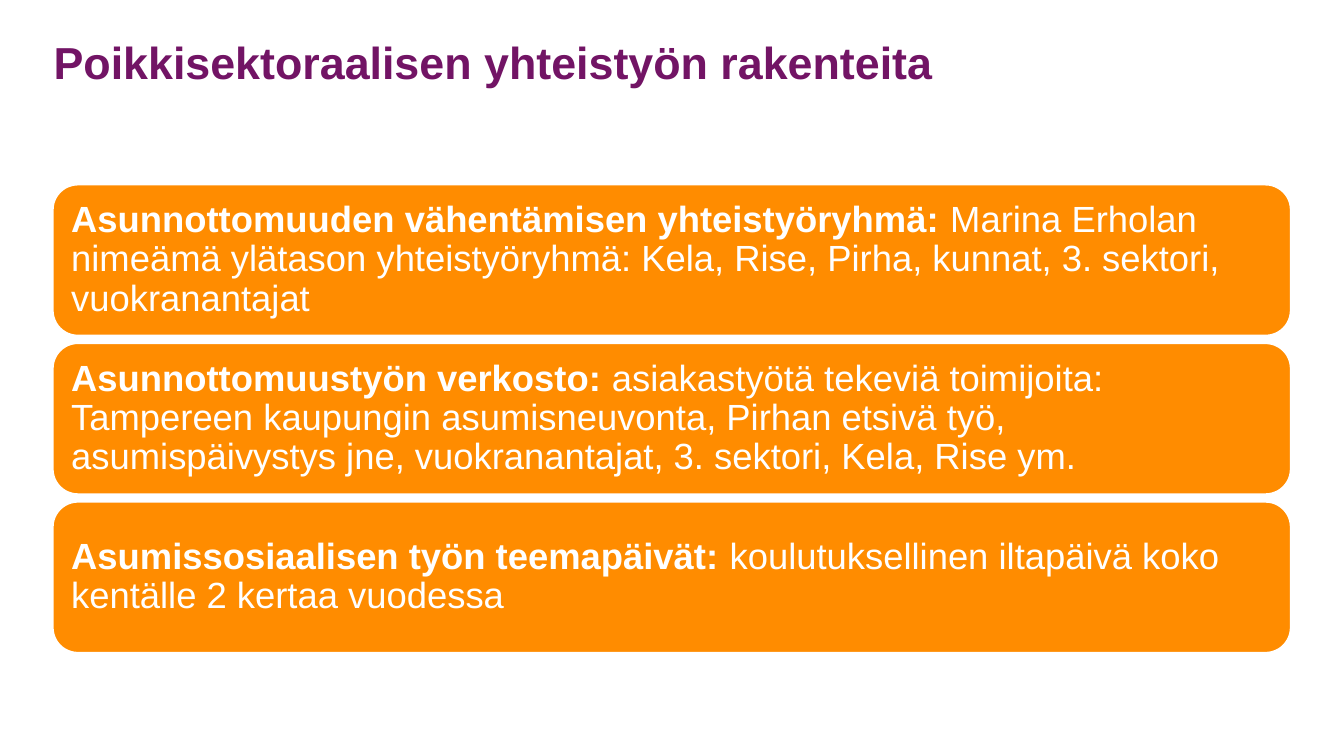
from dataclasses import dataclass

from pptx import Presentation
from pptx.dml.color import RGBColor
from pptx.enum.shapes import MSO_SHAPE
from pptx.enum.text import MSO_ANCHOR, PP_ALIGN
from pptx.util import Cm, Pt


@dataclass(frozen=True)
class Theme:
    font: str = "Arial"
    purple: RGBColor = RGBColor(0x72, 0x14, 0x65)
    orange: RGBColor = RGBColor(0xFF, 0x8C, 0x00)
    white: RGBColor = RGBColor(0xFF, 0xFF, 0xFF)
    title_size: float = 32
    body_size: float = 26
    line_width: float = 1.35
    line_spacing: float = 0.9


THEME = Theme()

TITLE = "Poikkisektoraalisen yhteistyön rakenteita"
STRUCTURES = [
    ("Asunnottomuuden vähentämisen yhteistyöryhmä: ",
     "Marina Erholan nimeämä ylätason yhteistyöryhmä: Kela, Rise, Pirha, "
     "kunnat, 3. sektori, vuokranantajat"),
    ("Asunnottomuustyön verkosto: ",
     "asiakastyötä tekeviä toimijoita: Tampereen kaupungin asumisneuvonta, "
     "Pirhan etsivä työ, asumispäivystys jne, vuokranantajat, 3. sektori, "
     "Kela, Rise ym."),
    ("Asumissosiaalisen työn teemapäivät: ",
     "koulutuksellinen iltapäivä koko kentälle 2 kertaa vuodessa"),
]


def add_run(p, text, *, size, color, bold=False):
    r = p.add_run()
    r.text = text
    r.font.name = THEME.font
    r.font.size = Pt(size)
    r.font.bold = bold
    r.font.color.rgb = color


def format_frame(tf, *, anchor, inset, top):
    """Set up a wrapping frame and return its left-aligned first paragraph."""
    tf.word_wrap = True
    tf.vertical_anchor = anchor
    tf.margin_left = tf.margin_right = tf.margin_bottom = inset
    tf.margin_top = top
    p = tf.paragraphs[0]
    p.alignment = PP_ALIGN.LEFT
    p.line_spacing = THEME.line_spacing
    return p


def set_title(s, text, left, top, width, height):
    sp = s.shapes.title
    sp.left, sp.top, sp.width, sp.height = left, top, width, height
    p = format_frame(sp.text_frame, anchor=MSO_ANCHOR.TOP,
                     inset=0, top=Cm(0.11))
    add_run(p, text, size=THEME.title_size, color=THEME.purple, bold=True)


def add_structures(s, items, left, top, width, height, gap):
    """Stack equal rounded boxes, one per item, inside the given box."""
    box_height = (height - gap * (len(items) - 1)) // len(items)
    for i, (name, description) in enumerate(items):
        sp = s.shapes.add_shape(MSO_SHAPE.ROUNDED_RECTANGLE, left,
                                top + i * (box_height + gap),
                                width, box_height)
        sp.shadow.inherit = False
        sp.fill.solid()
        sp.fill.fore_color.rgb = THEME.orange
        sp.line.color.rgb = THEME.white
        sp.line.width = Pt(THEME.line_width)
        p = format_frame(sp.text_frame, anchor=MSO_ANCHOR.MIDDLE,
                         inset=Cm(0.28), top=Cm(0.28))
        add_run(p, name, size=THEME.body_size, color=THEME.white, bold=True)
        add_run(p, description, size=THEME.body_size, color=THEME.white)


def main():
    prs = Presentation()
    prs.slide_width, prs.slide_height = Cm(33.87), Cm(19.05)
    s = prs.slides.add_slide(prs.slide_layouts[5])  # title only

    # Heading
    set_title(s, TITLE, Cm(1.35), Cm(0.92), Cm(31.2), Cm(2.56))

    # Stack of cooperation structures
    add_structures(s, STRUCTURES, Cm(1.33), Cm(4.65), Cm(31.2), Cm(11.8),
                   gap=Cm(0.19))

    prs.save("out.pptx")


if __name__ == "__main__":
    main()
